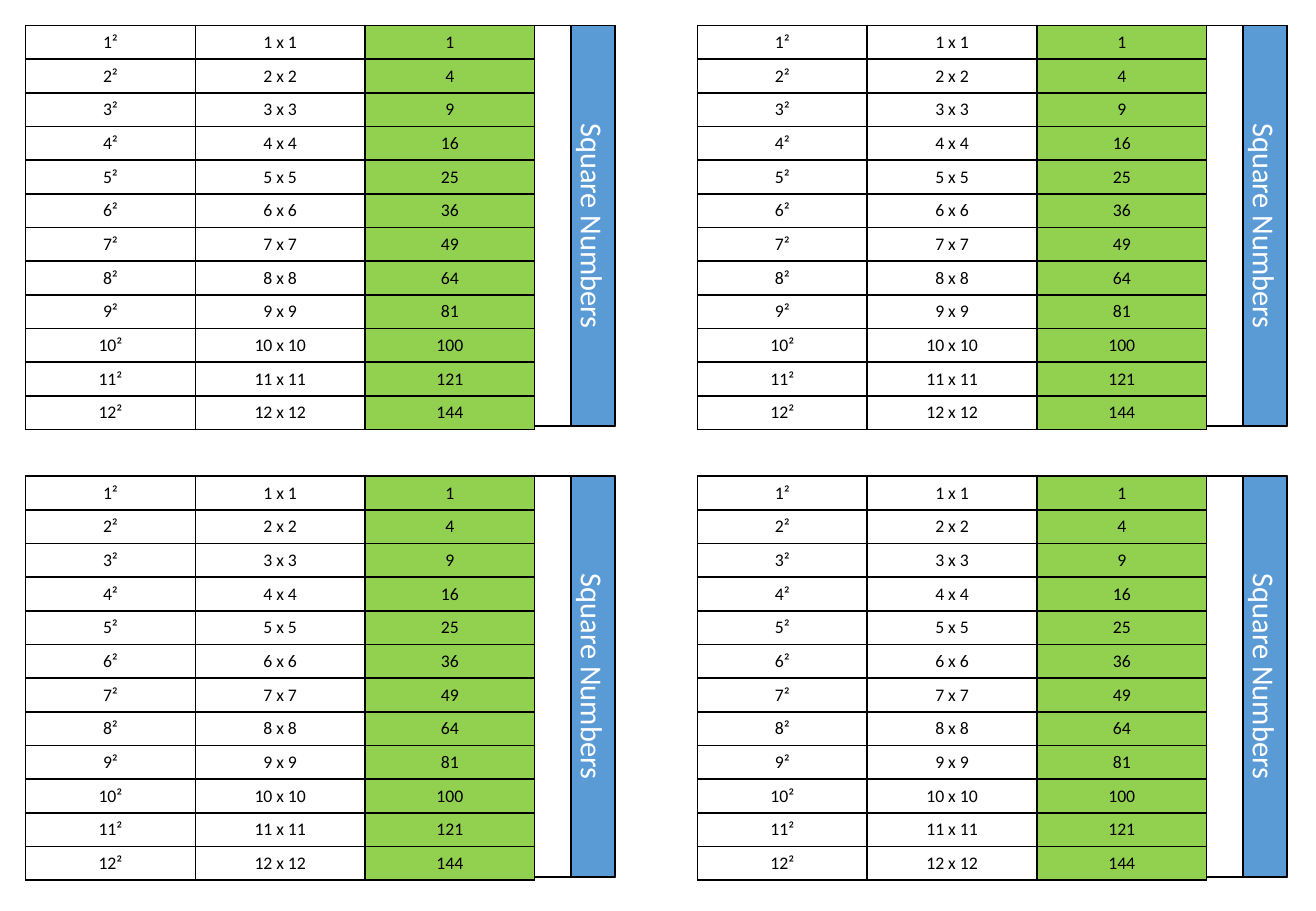
from dataclasses import dataclass

from lxml.etree import SubElement
from pptx import Presentation
from pptx.dml.color import RGBColor
from pptx.enum.shapes import MSO_SHAPE
from pptx.enum.text import MSO_ANCHOR, PP_ALIGN
from pptx.oxml.ns import qn
from pptx.shapes.autoshape import Shape
from pptx.slide import Slide
from pptx.table import _Cell
from pptx.text.text import TextFrame
from pptx.util import Inches, Length, Pt

SLIDE_WIDTH = Inches(10.83)
SLIDE_HEIGHT = Inches(7.5)
BLACK, WHITE, GREEN, BLUE = "000000", "FFFFFF", "92D050", "5B9BD5"
COLUMN_FILLS = (WHITE, WHITE, GREEN)
LARGEST_ROOT = 12
BORDER = Pt(1)


def across(percent: float) -> Length:
    return Length(round(SLIDE_WIDTH * percent / 100))


def down(percent: float) -> Length:
    return Length(round(SLIDE_HEIGHT * percent / 100))


MARGIN_X, MARGIN_Y = across(1.94), down(2.8)
PITCH_X, PITCH_Y = across(51.06), down(49.47)
CARD_WIDTH, CARD_HEIGHT = across(44.78), down(44)
COLUMN_WIDTH = across(12.9)
BANNER_THICKNESS = across(3.32)


@dataclass(frozen=True)
class Card:
    column: int
    row: int

    @property
    def left(self) -> int:
        return MARGIN_X + self.column * PITCH_X

    @property
    def top(self) -> int:
        return MARGIN_Y + self.row * PITCH_Y


def color(hex_value: str) -> RGBColor:
    return RGBColor.from_string(hex_value)


def write(frame: TextFrame, text: str, *, size: float, ink: str,
          font: str = "Calibri") -> None:
    paragraph = frame.paragraphs[0]
    paragraph.alignment = PP_ALIGN.CENTER
    run = paragraph.add_run()
    run.text = text
    run.font.name = font
    run.font.size = Pt(size)
    run.font.color.rgb = color(ink)


def draw_panel(slide: Slide, left: int, top: int, width: int, height: int,
               fill: str) -> Shape:
    panel = slide.shapes.add_shape(MSO_SHAPE.RECTANGLE, left, top, width, height)
    panel.shadow.inherit = False
    panel.fill.solid()
    panel.fill.fore_color.rgb = color(fill)
    panel.line.color.rgb = color(BLACK)
    panel.line.width = BORDER
    return panel


def style_cell(cell: _Cell, fill: str) -> None:
    properties = cell._tc.get_or_add_tcPr()
    for side in ("a:lnL", "a:lnR", "a:lnT", "a:lnB"):
        edge = SubElement(properties, qn(side), w=str(BORDER))
        edge_fill = SubElement(edge, qn("a:solidFill"))
        SubElement(edge_fill, qn("a:srgbClr"), val=BLACK)
    cell.fill.solid()
    cell.fill.fore_color.rgb = color(fill)


def draw_squares(slide: Slide, card: Card) -> None:
    squares = slide.shapes.add_table(
        LARGEST_ROOT, len(COLUMN_FILLS), card.left, card.top,
        COLUMN_WIDTH * len(COLUMN_FILLS), CARD_HEIGHT).table
    squares.first_row = False
    squares.horz_banding = False
    for root in range(1, LARGEST_ROOT + 1):
        facts = (f"{root}²", f"{root} x {root}", str(root * root))
        for column, (fact, fill) in enumerate(zip(facts, COLUMN_FILLS)):
            cell = squares.cell(root - 1, column)
            style_cell(cell, fill)
            write(cell.text_frame, fact, size=10.5, ink=BLACK)


def draw_banner(slide: Slide, card: Card) -> None:
    center_x = card.left + CARD_WIDTH - BANNER_THICKNESS // 2
    center_y = card.top + CARD_HEIGHT // 2
    banner = draw_panel(slide, center_x - CARD_HEIGHT // 2,
                        center_y - BANNER_THICKNESS // 2,
                        CARD_HEIGHT, BANNER_THICKNESS, BLUE)
    banner.rotation = 90
    banner.text_frame.vertical_anchor = MSO_ANCHOR.MIDDLE
    write(banner.text_frame, "Square Numbers", size=18, ink=WHITE)


def draw_card(slide: Slide, card: Card) -> None:
    draw_panel(slide, card.left, card.top, CARD_WIDTH, CARD_HEIGHT, WHITE)
    draw_squares(slide, card)
    draw_banner(slide, card)


def main() -> None:
    deck = Presentation()
    deck.slide_width = SLIDE_WIDTH
    deck.slide_height = SLIDE_HEIGHT
    slide = deck.slides.add_slide(deck.slide_layouts[6])
    for row in range(2):
        for column in range(2):
            draw_card(slide, Card(column, row))
    deck.save("out.pptx")


if __name__ == "__main__":
    main()
